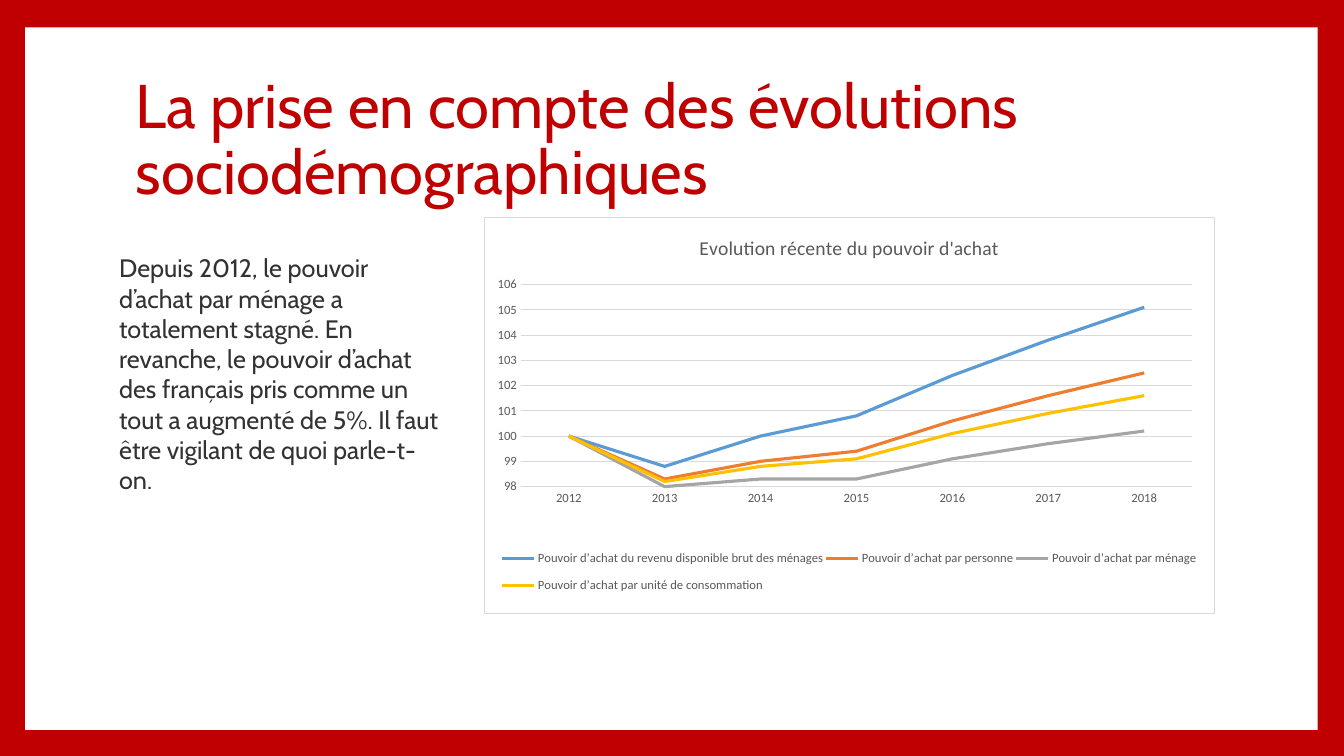
from dataclasses import dataclass

from lxml import etree
from pptx import Presentation
from pptx import util as u
from pptx.chart.data import CategoryChartData
from pptx.dml.color import RGBColor
from pptx.enum import chart as charts, shapes, text
from pptx.oxml import parse_xml
from pptx.oxml.ns import nsdecls, qn

RED = RGBColor(0xC0, 0x00, 0x00)
WHITE = RGBColor(0xFF, 0xFF, 0xFF)
INK = RGBColor(0x32, 0x32, 0x32)
GREY = RGBColor(0x59, 0x59, 0x59)
RULE = RGBColor(0xD9, 0xD9, 0xD9)
BLUE = RGBColor(0x5B, 0x9B, 0xD5)
ORANGE = RGBColor(0xED, 0x7D, 0x31)
SILVER = RGBColor(0xA5, 0xA5, 0xA5)
GOLD = RGBColor(0xFF, 0xC0, 0x00)

# Grid of 160 columns by 90 rows
WIDTH, HEIGHT = u.Inches(13.33), u.Inches(7.5)
COLUMNS, ROWS = 160, 90


@dataclass(frozen=True)
class Area:
    column: float
    row: float
    columns: float
    rows: float

    def box(self) -> tuple[int, int, int, int]:
        return (round(self.column * WIDTH / COLUMNS), round(self.row * HEIGHT / ROWS),
                round(self.columns * WIDTH / COLUMNS), round(self.rows * HEIGHT / ROWS))


@dataclass(frozen=True)
class Passage:
    area: Area
    words: str
    size: int
    color: RGBColor
    anchor: text.MSO_ANCHOR
    line_spacing: float


@dataclass(frozen=True)
class Measure:
    name: str
    values: tuple[float, ...]
    color: RGBColor


PANEL = Area(3, 3.25, 153.85, 83.65)
CHART = Area(57.6, 25.8, 87, 47.3)
PASSAGES = (
    Passage(Area(15, 8, 129.6, 17.75), "La prise en compte des évolutions sociodémographiques",
            44, RED, text.MSO_ANCHOR.MIDDLE, 0.9),
    Passage(Area(13, 29.5, 41.4, 26.65),
            "Depuis 2012, le pouvoir d’achat par ménage a totalement stagné. En revanche, "
            "le pouvoir d’achat des français pris comme un tout a augmenté de 5%. "
            "Il faut être vigilant de quoi parle-t-on.",
            18, INK, text.MSO_ANCHOR.TOP, 1.0),
)
YEARS = [str(year) for year in range(2012, 2019)]
MEASURES = (
    Measure("Pouvoir d’achat du revenu disponible brut des ménages",
            (100, 98.8, 100, 100.8, 102.4, 103.8, 105.1), BLUE),
    Measure("Pouvoir d’achat par personne",
            (100, 98.3, 99, 99.4, 100.6, 101.6, 102.5), ORANGE),
    Measure("Pouvoir d’achat par ménage",
            (100, 98, 98.3, 98.3, 99.1, 99.7, 100.2), SILVER),
    Measure("Pouvoir d’achat par unité de consommation",
            (100, 98.2, 98.8, 99.1, 100.1, 100.9, 101.6), GOLD),
)


def style_font(font, size: float, color: RGBColor, face: str = "Calibri") -> None:
    font.name, font.size, font.bold = face, u.Pt(size), False
    font.color.rgb = color


def style_line(line, color: RGBColor, width: float) -> None:
    line.color.rgb = color
    line.width = u.Pt(width)


def add_passage(slide, passage: Passage) -> None:
    frame = slide.shapes.add_textbox(*passage.area.box()).text_frame
    frame.word_wrap = True
    frame.vertical_anchor = passage.anchor
    paragraph = frame.paragraphs[0]
    paragraph.line_spacing = passage.line_spacing
    run = paragraph.add_run()
    run.text = passage.words
    style_font(run.font, passage.size, passage.color, "Cabin")


def place_part(part, index: int, shares: tuple[float, ...], inner: bool = False) -> None:
    """Fix a chart part at x, y, w, h, as shares of the chart."""
    for old in part.findall(qn("c:layout")):
        part.remove(old)
    layout = parse_xml(f"<c:layout {nsdecls('c')}><c:manualLayout/></c:layout>")
    settings = [("layoutTarget", "inner")] if inner else []
    settings += [("xMode", "edge"), ("yMode", "edge"), *zip("xywh", shares)]
    for tag, value in settings:
        etree.SubElement(layout[0], qn(f"c:{tag}")).set("val", str(value))
    part.insert(index, layout)


def add_purchasing_power_chart(slide) -> None:
    data = CategoryChartData()
    data.categories = YEARS
    for measure in MEASURES:
        data.add_series(measure.name, measure.values)
    chart = slide.shapes.add_chart(charts.XL_CHART_TYPE.LINE, *CHART.box(), data).chart
    style_font(chart.font, 10, GREY)

    # Title and series
    chart.has_title = True
    heading = chart.chart_title.text_frame.paragraphs[0].add_run()
    heading.text = "Evolution récente du pouvoir d'achat"
    style_font(heading.font, 14, GREY)
    chart.plots[0].vary_by_categories = False
    for series, measure in zip(chart.plots[0].series, MEASURES):
        series.smooth = False
        series.marker.style = charts.XL_MARKER_STYLE.NONE
        style_line(series.format.line, measure.color, 2.25)

    # Axes
    for axis in (chart.category_axis, chart.value_axis):
        axis.major_tick_mark = axis.minor_tick_mark = charts.XL_TICK_MARK.NONE
        style_font(axis.tick_labels.font, 9, GREY)
    style_line(chart.category_axis.format.line, RULE, 0.75)
    scale = chart.value_axis
    scale.minimum_scale, scale.maximum_scale, scale.major_unit = 98, 106, 1
    scale.format.line.fill.background()
    scale.has_major_gridlines = True
    style_line(scale.major_gridlines.format.line, RULE, 0.75)

    # Legend and layout
    chart.has_legend = True
    chart.legend.position = charts.XL_LEGEND_POSITION.RIGHT
    chart.legend.include_in_layout = False
    style_font(chart.legend.font, 9, GREY)
    root = chart.element
    place_part(root.find(f".//{qn('c:plotArea')}"), 0, (0.05, 0.17, 0.92, 0.51), inner=True)
    place_part(root.find(f".//{qn('c:legend')}"), 1, (0.02, 0.81, 0.96, 0.17))

    # Frame of the chart
    root.find(qn("c:chart")).addnext(parse_xml(
        f"<c:spPr {nsdecls('c', 'a')}>"
        f'<a:solidFill><a:srgbClr val="{WHITE}"/></a:solidFill>'
        f'<a:ln w="{u.Pt(0.75)}"><a:solidFill><a:srgbClr val="{RULE}"/></a:solidFill></a:ln>'
        "</c:spPr>"))


def main() -> None:
    deck = Presentation()
    deck.slide_width, deck.slide_height = WIDTH, HEIGHT
    slide = deck.slides.add_slide(deck.slide_layouts[6])

    # Red border around a white panel
    slide.background.fill.solid()
    slide.background.fill.fore_color.rgb = RED
    panel = slide.shapes.add_shape(shapes.MSO_SHAPE.RECTANGLE, *PANEL.box())
    panel.shadow.inherit = False
    panel.fill.solid()
    panel.fill.fore_color.rgb = WHITE
    panel.line.fill.background()

    # Content
    add_purchasing_power_chart(slide)
    for passage in PASSAGES:
        add_passage(slide, passage)
    deck.save("out.pptx")


if __name__ == "__main__":
    main()
